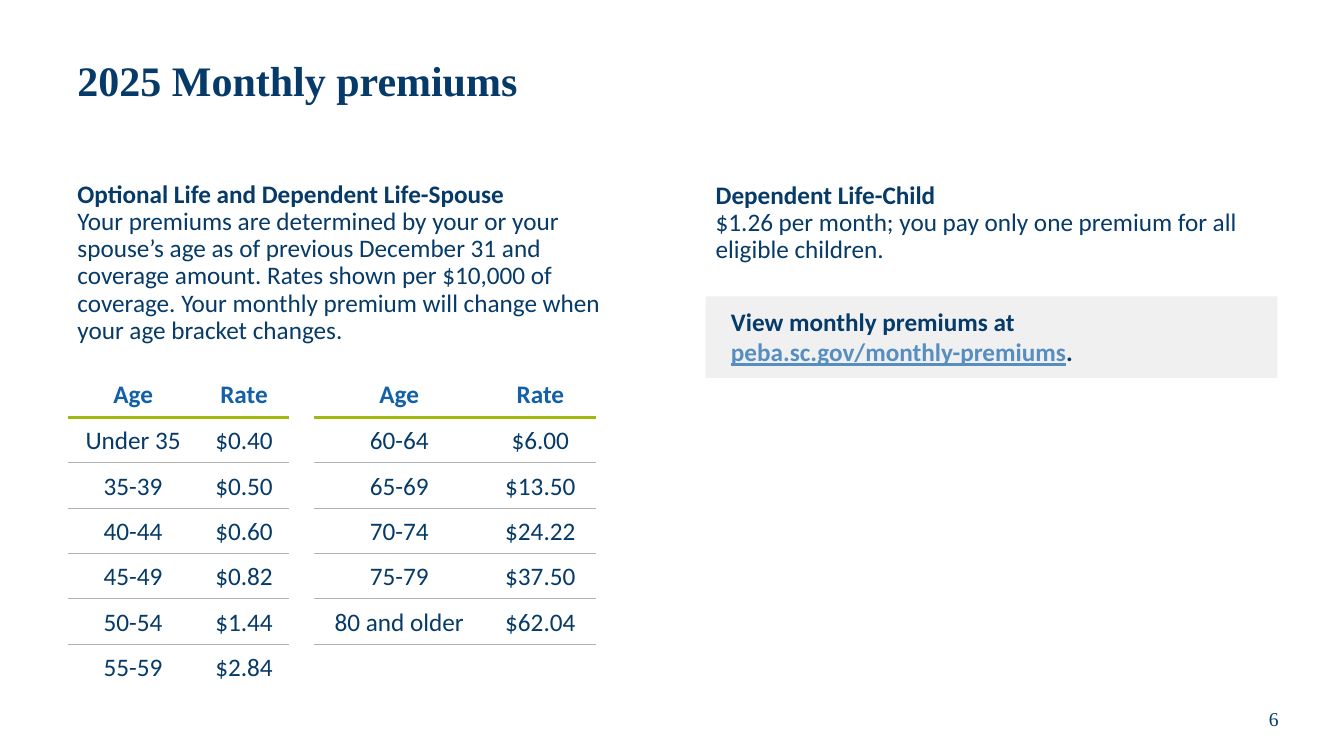
from dataclasses import dataclass

from lxml import etree
from pptx import Presentation
from pptx.dml.color import RGBColor
from pptx.enum import shapes, text
from pptx.oxml import ns
from pptx.util import Inches, Pt

COLORS = {"navy": "063A68", "blue": "1260A7", "link": "568EC1",
          "green": "A0B810", "gray": "B2B2B2", "panel": "F0F0F0"}
PLAIN = "{2D5ABB26-0587-4C30-8999-92F81FD0307C}"
MID, CENTER = text.MSO_ANCHOR.MIDDLE, text.PP_ALIGN.CENTER
SERIF = "Times New Roman"


@dataclass
class Block:
    """Text box whose first line is bold; later lines are regular."""
    lines: list[str]
    left: float
    top: float
    width: float
    height: float
    size: float = 18
    face: str = "Calibri"
    bold: bool = True
    anchor: text.MSO_ANCHOR = text.MSO_ANCHOR.TOP
    align: text.PP_ALIGN = text.PP_ALIGN.LEFT


BLOCKS = [
    Block(["Dependent Life-Child",
           "$1.26 per month; you pay only one premium for all eligible children."],
          7, 1.76, 5.67, 5.12),
    Block(["Optional Life and Dependent Life-Spouse",
           "Your premiums are determined by your or your spouse’s age as of "
           "previous December 31 and coverage amount. Rates shown per $10,000 "
           "of coverage. Your monthly premium will change when your age "
           "bracket changes."],
          0.67, 1.75, 5.67, 5.13),
    Block(["6"], 12.05, 6.89, 1.17, 0.5, 14, SERIF, False, MID, CENTER),
    Block(["2025 Monthly premiums"], 0.67, 0.25, 12, 1.15, 30, SERIF, True, MID),
]

WIDTHS = [1.3, 0.9, 0.23, 1.7, 1.1]
GAP = 2
ROW = 0.45
RATES = [
    ["Age", "Rate", "", "Age", "Rate"],
    ["Under 35", "$0.40", "", "60-64", "$6.00"],
    ["35-39", "$0.50", "", "65-69", "$13.50"],
    ["40-44", "$0.60", "", "70-74", "$24.22"],
    ["45-49", "$0.82", "", "75-79", "$37.50"],
    ["50-54", "$1.44", "", "80 and older", "$62.04"],
    ["55-59", "$2.84", "", "", ""],
]


def style(run, color: str = "navy", size: float = 18,
          face: str = "Calibri", bold: bool = True) -> None:
    font = run.font
    font.size, font.name, font.bold = Pt(size), face, bold
    font.color.rgb = RGBColor.from_string(COLORS[color])


def write(slide, block: Block) -> None:
    box = slide.shapes.add_textbox(Inches(block.left), Inches(block.top),
                                   Inches(block.width), Inches(block.height))
    frame = box.text_frame
    frame.word_wrap = True
    frame.vertical_anchor = block.anchor
    para = frame.paragraphs[0]
    para.text = "\v".join(block.lines)
    para.alignment, para.line_spacing = block.align, 0.9
    for i, run in enumerate(para.runs):
        style(run, size=block.size, face=block.face, bold=block.bold and i == 0)


def panel(slide) -> None:
    """Gray box that points to the premiums page."""
    box = slide.shapes.add_shape(shapes.MSO_SHAPE.RECTANGLE, Inches(7),
                                 Inches(2.94), Inches(5.67), Inches(0.81))
    box.shadow.inherit = False
    box.fill.solid()
    box.fill.fore_color.rgb = RGBColor.from_string(COLORS["panel"])
    box.line.fill.background()
    frame = box.text_frame
    frame.word_wrap = True
    frame.vertical_anchor = text.MSO_ANCHOR.TOP
    frame.margin_left = frame.margin_right = Inches(0.25)
    frame.margin_top = frame.margin_bottom = Inches(0.1)
    para = frame.paragraphs[0]
    para.text = "View monthly premiums at \vpeba.sc.gov/monthly-premiums"
    para.alignment = text.PP_ALIGN.LEFT
    para.add_run().text = "."
    for run, color in zip(para.runs, ["navy", "link", "navy"]):
        style(run, color)
    para.runs[1].font.underline = True


def rule(cell, side: str, row: int) -> None:
    """Draw the line that lies below the given row on one side of a cell."""
    color, width = ("green", 2.25) if row == 0 else ("gray", 0.5)
    line = etree.SubElement(cell._tc.get_or_add_tcPr(), ns.qn(f"a:ln{side}"),
                            w=str(Pt(width)))
    fill = etree.SubElement(line, ns.qn("a:solidFill"))
    etree.SubElement(fill, ns.qn("a:srgbClr"), val=COLORS[color])


def fill_cell(cell, words: str, head: bool) -> None:
    cell.vertical_anchor = MID
    if not head:
        cell.margin_left = cell.margin_right = Inches(0.07)
        cell.margin_top = cell.margin_bottom = 0
    para = cell.text_frame.paragraphs[0]
    para.text = words
    para.alignment = CENTER
    para.line_spacing = 1.0 if head else 1.07
    for run in para.runs:
        style(run, "blue" if head else "navy", bold=head)


def rates(slide) -> None:
    count = len(RATES)
    table = slide.shapes.add_table(count, len(WIDTHS), Inches(0.67), Inches(3.69),
                                   Inches(sum(WIDTHS)), Inches(ROW * count)).table
    table.first_row = table.horz_banding = False
    table._tbl.tblPr[0].text = PLAIN
    for col, width in zip(table.columns, WIDTHS):
        col.width = Inches(width)
    for r, row in enumerate(RATES):
        table.rows[r].height = Inches(ROW)
        for c, words in enumerate(row):
            cell = table.cell(r, c)
            if c != GAP:
                if r > 0:
                    rule(cell, "T", r - 1)
                if r < count - 1:
                    rule(cell, "B", r)
            cell.fill.background()
            if words:
                fill_cell(cell, words, r == 0)
    table.cell(0, GAP).merge(table.cell(count - 1, GAP))


def main() -> None:
    deck = Presentation()
    deck.slide_width, deck.slide_height = Inches(13.33), Inches(7.5)
    slide = deck.slides.add_slide(deck.slide_layouts[6])
    for block in BLOCKS:
        write(slide, block)
    panel(slide)
    rates(slide)
    deck.save("out.pptx")


if __name__ == "__main__":
    main()
